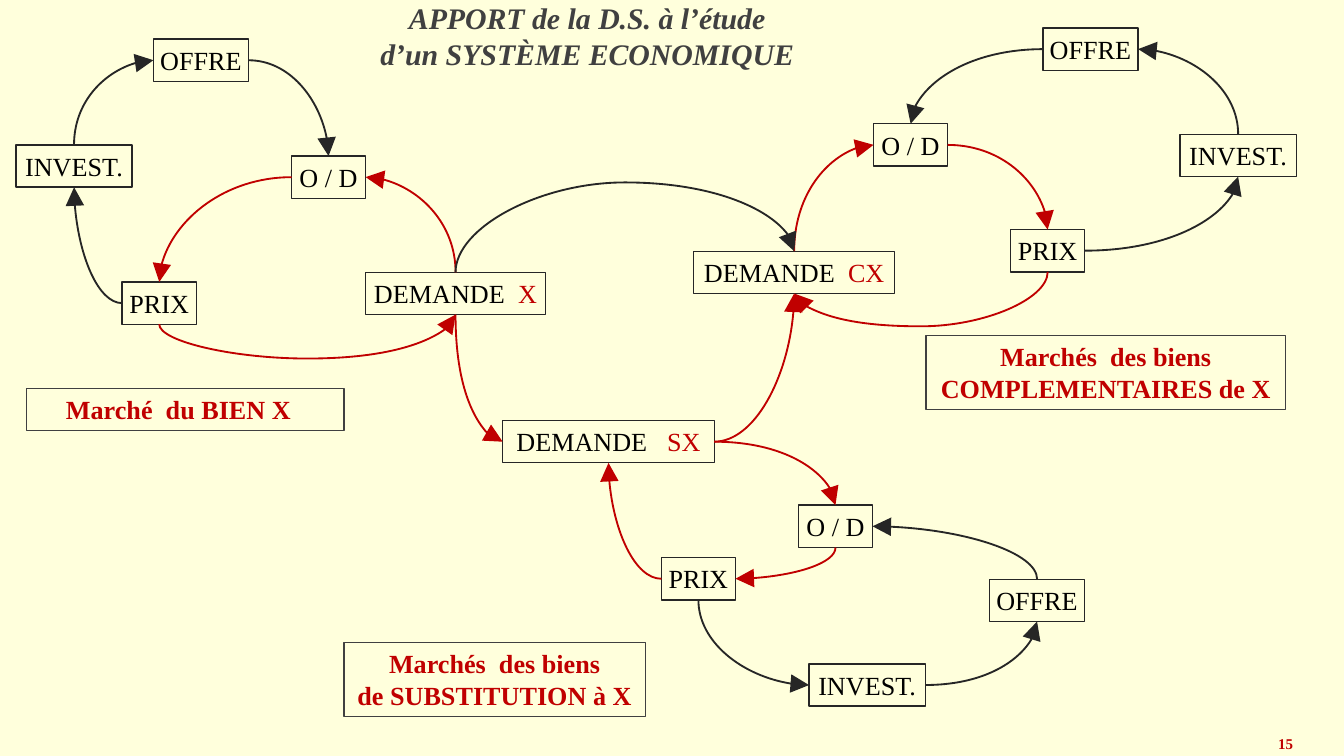
import pptx
import pptx.dml.color
import pptx.enum.shapes
import pptx.enum.text
import pptx.oxml
import pptx.oxml.ns
import pptx.util
from pptx.util import Cm
from lxml import etree

RED, DARK, GREY, BLACK, CREAM = "C00000", "262626", "404040", "000000", "FFFFDC"
TOP, LEFT, BOTTOM, RIGHT = range(4)
BOX_HEIGHT = 0.8

# Kind of box: text, red suffix, width
KINDS = {
    "X": ("DEMANDE  ", "X", 3.4),
    "CX": ("DEMANDE  ", "CX", 3.8),
    "SX": ("DEMANDE   ", "SX", 4),
    "offre": ("OFFRE", "", 1.8),
    "prix": ("PRIX", "", 1.4),
    "od": ("O / D", "", 1.4),
    "invest": ("INVEST.", "", 2.2),
}

# Left and top of each box, by market
MARKETS = {
    "X": {"X": (6.91, 5.15), "offre": (2.9, 0.74), "prix": (2.31, 5.33),
          "od": (5.51, 2.95), "invest": (0.3, 2.74)},
    "CX": {"CX": (13.11, 4.75), "offre": (19.71, 0.53), "prix": (19.1, 4.34),
           "od": (16.51, 2.34), "invest": (22.3, 2.54)},
    "SX": {"SX": (9.5, 7.95), "offre": (18.7, 10.95), "prix": (12.5, 10.54),
           "od": (15.09, 9.55), "invest": (15.29, 12.55)},
}

# Market, then (from, side, to, side, colour, height of the bend if U-shaped)
LOOPS = {
    "X": [("X", TOP, "od", RIGHT, RED), ("od", LEFT, "prix", TOP, RED),
          ("prix", BOTTOM, "X", BOTTOM, RED, 6.78),
          ("prix", LEFT, "invest", BOTTOM, DARK),
          ("invest", TOP, "offre", LEFT, DARK),
          ("offre", RIGHT, "od", TOP, DARK)],
    "CX": [("CX", TOP, "od", LEFT, RED), ("od", RIGHT, "prix", TOP, RED),
           ("prix", BOTTOM, "CX", BOTTOM, RED, 6.17),
           ("prix", RIGHT, "invest", BOTTOM, DARK),
           ("invest", TOP, "offre", RIGHT, DARK),
           ("offre", LEFT, "od", TOP, DARK)],
    "SX": [("SX", RIGHT, "od", TOP, RED), ("od", BOTTOM, "prix", RIGHT, RED),
           ("prix", LEFT, "SX", BOTTOM, RED),
           ("prix", BOTTOM, "invest", LEFT, DARK),
           ("invest", RIGHT, "offre", BOTTOM, DARK),
           ("offre", TOP, "od", RIGHT, DARK)],
}


def rgb(color):
    return pptx.dml.color.RGBColor.from_string(color)


def add_run(p, text, size=14, color=BLACK, bold=False, italic=False):
    r = p.add_run()
    r.text = text
    r.font.name = "Times New Roman"
    r.font.size = pptx.util.Pt(size)
    r.font.color.rgb = rgb(color)
    r.font.bold = bold
    r.font.italic = italic
    return r


def set_frame(tf, inset=0.1, wrap=False, middle=False):
    anchor = pptx.enum.text.MSO_ANCHOR
    tf.word_wrap = wrap
    tf.vertical_anchor = anchor.MIDDLE if middle else anchor.TOP
    tf.margin_left = tf.margin_right = tf.margin_top = tf.margin_bottom = Cm(inset)
    tf.paragraphs[0].alignment = pptx.enum.text.PP_ALIGN.CENTER


def add_frame(s, left, top, width, height, line):
    sp = s.shapes.add_shape(pptx.enum.shapes.MSO_SHAPE.RECTANGLE,
                            Cm(left), Cm(top), Cm(width), Cm(height))
    sp.shadow.inherit = False
    sp.fill.background()
    sp.line.color.rgb = rgb(line)
    sp.line.width = pptx.util.Pt(0.75)
    set_frame(sp.text_frame)
    return sp


def add_box(s, kind, left, top):
    text, suffix, width = KINDS[kind]
    sp = add_frame(s, left, top, width, BOX_HEIGHT, DARK)
    p = sp.text_frame.paragraphs[0]
    add_run(p, text)
    if suffix:
        add_run(p, suffix, color=RED)
    return sp


def add_label(s, lines, left, top, width, height):
    sp = add_frame(s, left, top, width, height, GREY)
    tf = sp.text_frame
    for i, line in enumerate(lines):
        p = tf.add_paragraph() if i else tf.paragraphs[0]
        p.alignment = pptx.enum.text.PP_ALIGN.CENTER
        add_run(p, line, color=RED, bold=True)
    return sp


def add_text(s, text, left, top, width, height, inset, **format):
    sp = s.shapes.add_textbox(Cm(left), Cm(top), Cm(width), Cm(height))
    set_frame(sp.text_frame, inset, wrap=True, middle=True)
    return add_run(sp.text_frame.paragraphs[0], text, **format)


def side_point(sp, side):
    dx, dy = [(0.5, 0), (0, 0.5), (0.5, 1), (1, 0.5)][side]
    return int(sp.left + dx * sp.width), int(sp.top + dy * sp.height)


def add_curve(s, start, start_side, end, end_side, color, bend=None):
    x1, y1 = side_point(start, start_side)
    x2, y2 = side_point(end, end_side)
    dx, dy = x2 - x1, y2 - y1
    c = s.shapes.add_connector(pptx.enum.shapes.MSO_CONNECTOR.CURVE, x1, y1, x2, y2)
    c.begin_connect(start, start_side)
    c.end_connect(end, end_side)

    # The preset leaves along its own x axis, so turn it to the starting side
    if start_side in (LEFT, RIGHT):
        turn = 180 if dx < 0 else 0
        width, height = abs(dx), abs(dy)
        flip_h, flip_v = False, (dx < 0) != (dy < 0)
    else:
        turn = 90 if (dx < 0) != (dy < 0) else 270
        width, height = abs(dy), abs(dx)
        flip_h = (dy < 0) == (turn == 90)
        flip_v = (dx > 0) == (turn == 90)
    sppr = c.element.spPr
    xfrm = sppr.xfrm
    xfrm.rot, xfrm.flipH, xfrm.flipV = turn, flip_h, flip_v
    c.left, c.top = (x1 + x2 - width) // 2, (y1 + y2 - height) // 2
    c.width, c.height = width, height
    if bend is None:
        sppr.prstGeom.set("prst", "curvedConnector2")
    else:
        sppr.prstGeom.rewrite_guides([("adj1", round((Cm(bend) - y1) / dy * 100000))])

    # Line, arrowhead and no shadow
    c.line.color.rgb = rgb(color)
    c.line.width = pptx.util.Pt(1)
    etree.SubElement(c.line._get_or_add_ln(), pptx.oxml.ns.qn("a:tailEnd"),
                     type="triangle", w="lg", len="lg")
    etree.SubElement(sppr, pptx.oxml.ns.qn("a:effectLst"))


def add_text_shadow(r):
    shadow = pptx.oxml.parse_xml(
        f'<a:effectLst {pptx.oxml.ns.nsdecls("a")}>'
        '<a:outerShdw blurRad="38100" dist="38100" dir="2700000" algn="tl">'
        '<a:srgbClr val="000000"><a:alpha val="43000"/></a:srgbClr>'
        '</a:outerShdw></a:effectLst>')
    r.font._element.find(pptx.oxml.ns.qn("a:solidFill")).addnext(shadow)


def main():
    prs = pptx.Presentation()
    prs.slide_width, prs.slide_height = Cm(25.4), Cm(14.29)
    s = prs.slides.add_slide(prs.slide_layouts[6])
    s.background.fill.solid()
    s.background.fill.fore_color.rgb = rgb(CREAM)

    # Title and page number
    title = add_text(s, "APPORT de la D.S. à l’étude d’un SYSTÈME ECONOMIQUE",
                     6.9, 0, 8.4, 1.35, 0.25, size=16, color=GREY, bold=True, italic=True)
    add_text_shadow(title)
    add_text(s, "15", 23.7, 13.82, 1.2, 0.46, 0, size=8, color=RED, bold=True)

    # Three markets and their loops
    demand = {}
    for market, places in MARKETS.items():
        boxes = {kind: add_box(s, kind, *place) for kind, place in places.items()}
        demand[market] = boxes[market]
        for start, start_side, end, end_side, *style in LOOPS[market]:
            add_curve(s, boxes[start], start_side, boxes[end], end_side, *style)

    # Links between the markets
    add_curve(s, demand["X"], BOTTOM, demand["SX"], LEFT, RED)
    add_curve(s, demand["X"], TOP, demand["CX"], TOP, DARK, 3.45)
    add_curve(s, demand["SX"], RIGHT, demand["CX"], BOTTOM, RED)

    # Market names
    label = add_label(s, ["Marché  du BIEN X"], 0.5, 7.34, 6, 0.8)
    label.text_frame.margin_right = Cm(0.35)
    add_label(s, ["Marchés  des biens", "COMPLEMENTAIRES de X"], 17.5, 6.34, 6.8, 1.4)
    add_label(s, ["Marchés  des biens", "de SUBSTITUTION à X"], 6.5, 12.14, 5.7, 1.4)

    prs.save("out.pptx")


if __name__ == "__main__":
    main()
